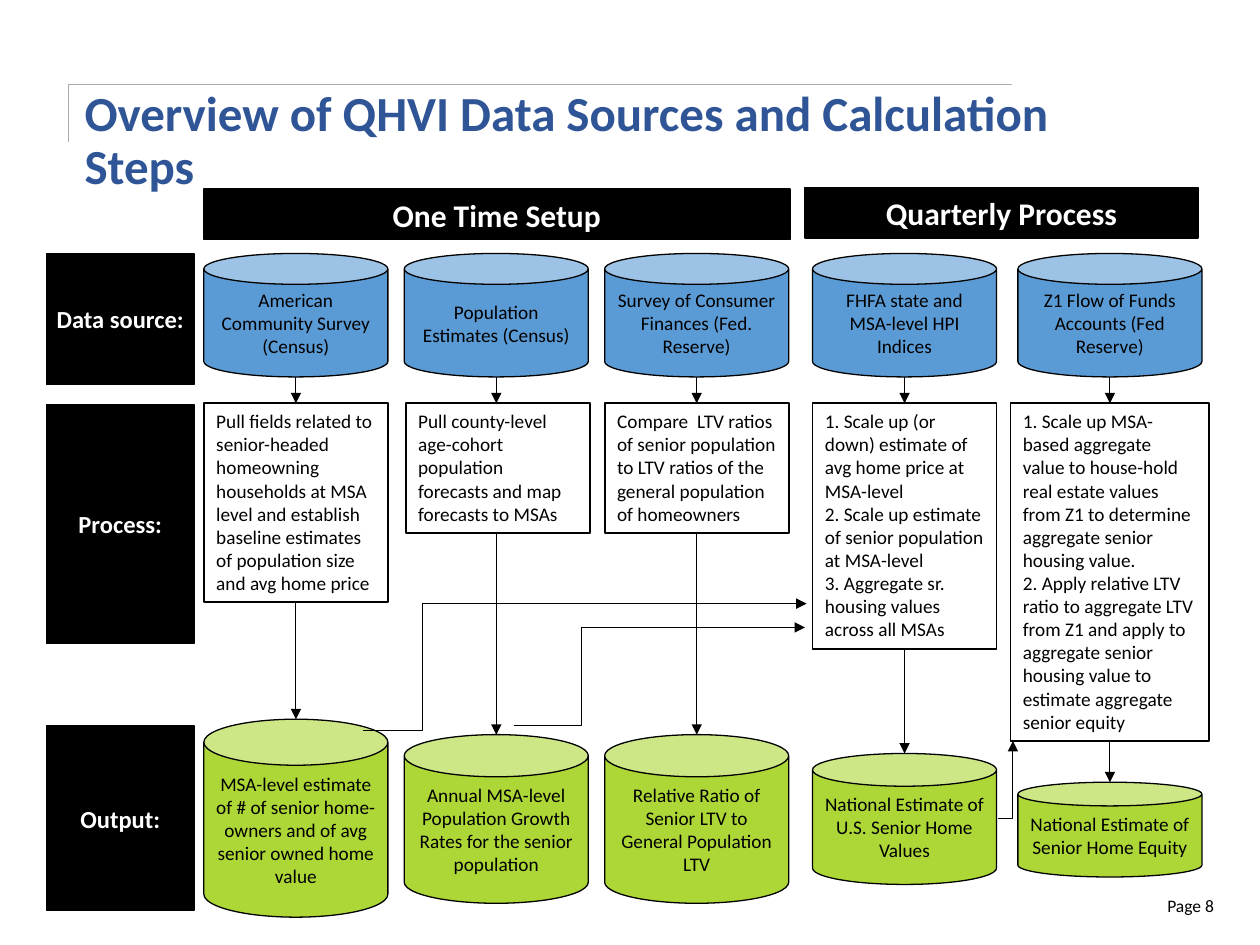
import pptx
import pptx.dml.color
import pptx.enum.shapes
import pptx.enum.text
import pptx.oxml.ns
import pptx.util
from lxml import etree

Cm, Pt, qn = pptx.util.Cm, pptx.util.Pt, pptx.oxml.ns.qn
SHAPE = pptx.enum.shapes.MSO_SHAPE
CONNECTOR = pptx.enum.shapes.MSO_CONNECTOR
ALIGN = pptx.enum.text.PP_ALIGN
ANCHOR = pptx.enum.text.MSO_ANCHOR

BLACK, WHITE, TITLE_BLUE, RULE_GREY = "000000", "FFFFFF", "2F5597", "AFABAB"
SOURCE_BLUE, OUTPUT_GREEN = "5B9BD5", "ADD737"

BODY_FONT = {"name": "Calibri", "size": Pt(11), "bold": False}
PAGE_FONT = {**BODY_FONT, "size": Pt(10)}
LABEL_FONT = {**BODY_FONT, "size": Pt(14), "bold": True}
HEADER_FONT = {**LABEL_FONT, "size": Pt(18)}
TITLE_FONT = {**LABEL_FONT, "size": Pt(28)}

COLUMN_WIDTH = 3.71
SOURCE_TOP, SOURCE_HEIGHT = 5.11, 2.49
PROCESS_TOP = 8.13

# Header: text, left, top, width
HEADERS = [
    ("One Time Setup", 4.11, 3.81, 11.81),
    ("Quarterly Process", 16.23, 3.78, 7.92),
]
# Row label: text, top, height
ROW_LABELS = [
    ("Data source:", SOURCE_TOP, 2.64),
    ("Process:", 8.15, 4.83),
    ("Output:", 14.63, 3.73),
]
# Column: left, source, process (text, left, width, height), output (text, top, height)
COLUMNS = [
    (4.11, "American Community Survey (Census)",
     ("Pull fields related to senior-headed homeowning households at MSA level and "
      "establish baseline estimates of population size and avg home price",
      4.11, COLUMN_WIDTH, 4.01),
     ("MSA-level estimate of # of senior home-owners and of avg senior owned home value",
      14.5, 3.99)),
    (8.15, "Population Estimates (Census)",
     ("Pull county-level age-cohort population forecasts and map forecasts to MSAs",
      8.18, COLUMN_WIDTH, 2.62),
     ("Annual MSA-level Population Growth Rates for the senior population", 14.81, 3.4)),
    (12.19, "Survey of Consumer Finances (Fed. Reserve)",
     ("Compare  LTV ratios of senior population to LTV ratios of the general "
      "population of homeowners", 12.19, COLUMN_WIDTH, 2.62),
     ("Relative Ratio of Senior LTV to General Population LTV", 14.81, 3.4)),
    (16.38, "FHFA state and MSA-level HPI Indices",
     ("1. Scale up (or down) estimate of avg home price at MSA-level\n"
      "2. Scale up estimate of senior population at MSA-level\n"
      "3. Aggregate sr. housing values across all MSAs", 16.38, COLUMN_WIDTH, 4.95),
     ("National Estimate of U.S. Senior Home Values", 15.19, 2.64)),
    (20.52, "Z1 Flow of Funds Accounts (Fed Reserve)",
     ("1. Scale up MSA-based aggregate value to house-hold real estate values from Z1 "
      "to determine aggregate senior housing value.\n"
      "2. Apply relative LTV ratio to aggregate LTV from Z1 and apply to aggregate "
      "senior housing value to estimate aggregate senior equity", 20.37, 4.01, 6.81),
     ("National Estimate of Senior Home Equity", 15.77, 1.91)),
]
# Cross link: start, end, position of the bend (None for a single corner)
CROSS_LINKS = [
    ((7.32, 14.73), (16.26, 12.17), 13300),
    ((10.36, 14.63), (16.23, 12.65), 23200),
    ((20.12, 16.51), (20.42, 14.94), None),
]


def rgb(hex_color):
    return pptx.dml.color.RGBColor.from_string(hex_color)


def write(frame, text, font, color, align, anchor):
    """Fill a text frame, one paragraph for each line of text."""
    frame.word_wrap = True
    frame.vertical_anchor = anchor
    frame.text = text
    for paragraph in frame.paragraphs:
        paragraph.alignment = align
        for run in paragraph.runs:
            for attribute, value in font.items():
                setattr(run.font, attribute, value)
            run.font.color.rgb = rgb(color)


def add_block(slide, kind, box, fill, text, font=BODY_FONT, color=BLACK,
              align=ALIGN.CENTER, anchor=ANCHOR.MIDDLE, line_width=0.75):
    block = slide.shapes.add_shape(kind, *map(Cm, box))
    block.shadow.inherit = False
    block.fill.solid()
    block.fill.fore_color.rgb = rgb(fill)
    block.line.color.rgb = rgb(BLACK)
    block.line.width = Pt(line_width)
    write(block.text_frame, text, font, color, align, anchor)
    return block


def add_line(slide, start, end, color=BLACK, kind=CONNECTOR.STRAIGHT):
    line = slide.shapes.add_connector(kind, *map(Cm, (*start, *end)))
    line.line.color.rgb = rgb(color)
    line.line.width = Pt(0.5)
    etree.SubElement(line._element.spPr, qn("a:effectLst"))
    return line


def add_arrow(slide, start, end, kind=CONNECTOR.STRAIGHT):
    arrow = add_line(slide, start, end, kind=kind)
    outline = arrow._element.spPr.find(qn("a:ln"))
    etree.SubElement(outline, qn("a:tailEnd"), type="triangle")
    return arrow


def add_cross_link(slide, start, end, bend):
    link = add_arrow(slide, start, end, CONNECTOR.ELBOW)
    geometry = link._element.spPr.find(qn("a:prstGeom"))
    if bend is None:
        geometry.set("prst", "bentConnector2")
    else:
        guides = geometry.find(qn("a:avLst"))
        etree.SubElement(guides, qn("a:gd"), name="adj1", fmla=f"val {bend}")


def add_title(slide):
    title = slide.shapes.title
    place = {"left": 1.45, "top": 1.02, "width": 21.89, "height": 3.68}
    for attribute, value in place.items():
        setattr(title, attribute, Cm(value))
    frame = title.text_frame
    write(frame, "Overview of QHVI Data Sources and Calculation Steps",
          TITLE_FONT, TITLE_BLUE, ALIGN.LEFT, ANCHOR.MIDDLE)
    frame.auto_size = pptx.enum.text.MSO_AUTO_SIZE.NONE
    frame.paragraphs[0].line_spacing = 0.9
    corner = (1.37, 1.7)
    for end in ((20.4, 1.7), (1.37, 2.87)):
        add_line(slide, corner, end, RULE_GREY)


def add_page_number(slide):
    page = slide.shapes.add_textbox(Cm(19.94), Cm(17.91), Cm(4.78), Cm(0.69))
    write(page.text_frame, "Page 8", PAGE_FONT, BLACK, ALIGN.RIGHT, ANCHOR.TOP)


def add_column(slide, left, source, process, output):
    """Stack source, process and output, joined by two arrows."""
    process_text, process_left, process_width, process_height = process
    output_text, output_top, output_height = output
    add_block(slide, SHAPE.CAN, (left, SOURCE_TOP, COLUMN_WIDTH, SOURCE_HEIGHT),
              SOURCE_BLUE, source)
    add_block(slide, SHAPE.RECTANGLE,
              (process_left, PROCESS_TOP, process_width, process_height),
              WHITE, process_text, align=ALIGN.LEFT, anchor=ANCHOR.TOP, line_width=1)
    add_block(slide, SHAPE.CAN, (left, output_top, COLUMN_WIDTH, output_height),
              OUTPUT_GREEN, output_text)
    center = left + COLUMN_WIDTH / 2
    add_arrow(slide, (center, SOURCE_TOP + SOURCE_HEIGHT), (center, PROCESS_TOP))
    add_arrow(slide, (center, PROCESS_TOP + process_height), (center, output_top))


def main():
    deck = pptx.Presentation()
    deck.slide_width, deck.slide_height = Cm(25.4), Cm(19.05)
    slide = deck.slides.add_slide(deck.slide_layouts.get_by_name("Title Only"))
    add_title(slide)
    add_page_number(slide)
    for text, left, top, width in HEADERS:
        add_block(slide, SHAPE.RECTANGLE, (left, top, width, 1.02), BLACK, text,
                  HEADER_FONT, WHITE, anchor=ANCHOR.BOTTOM, line_width=1)
    for text, top, height in ROW_LABELS:
        label = add_block(slide, SHAPE.RECTANGLE, (0.94, top, 2.97, height), BLACK,
                          text, LABEL_FONT, WHITE)
        label.text_frame.word_wrap = False
    for column in COLUMNS:
        add_column(slide, *column)
    for link in CROSS_LINKS:
        add_cross_link(slide, *link)
    deck.save("out.pptx")


if __name__ == "__main__":
    main()
